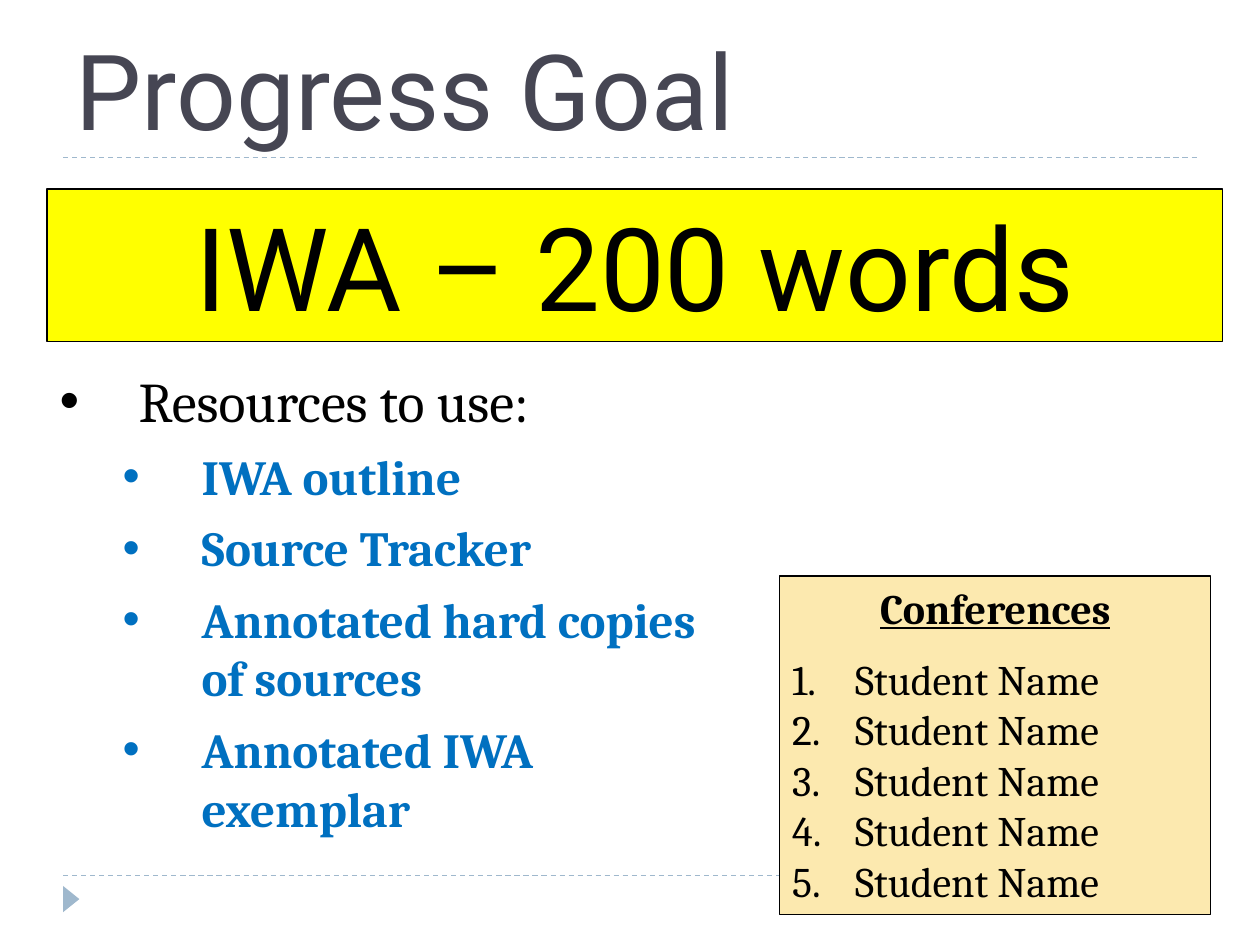
from dataclasses import dataclass

from lxml import etree
from pptx import Presentation
from pptx.dml.color import RGBColor
from pptx.enum.dml import MSO_LINE
from pptx.enum.shapes import MSO_CONNECTOR, MSO_SHAPE
from pptx.enum.text import MSO_ANCHOR, MSO_AUTO_SIZE, PP_ALIGN
from pptx.oxml.ns import qn
from pptx.util import Cm, Pt

DASH = MSO_LINE.DASH
STRAIGHT = MSO_CONNECTOR.STRAIGHT
RECTANGLE, TRIANGLE = MSO_SHAPE.RECTANGLE, MSO_SHAPE.ISOSCELES_TRIANGLE
TOP, MIDDLE, BOTTOM = MSO_ANCHOR.TOP, MSO_ANCHOR.MIDDLE, MSO_ANCHOR.BOTTOM
NO_FIT = MSO_AUTO_SIZE.NONE
LEFT, CENTER = PP_ALIGN.LEFT, PP_ALIGN.CENTER

TITLE = "Progress Goal"
GOAL = "IWA – 200 words"
RESOURCES_HEADING = "Resources to use:"
RESOURCES = [
    "IWA outline",
    "Source Tracker",
    "Annotated hard copies of sources",
    "Annotated IWA exemplar",
]
CONFERENCES_HEADING = "Conferences"
STUDENTS = ["Student Name"] * 5

TITLE_BOX = (1.27, 0.64, 22.86, 2.54)
GOAL_BOX = (0.95, 3.81, 23.7, 3.07)
RESOURCES_BOX = (0.95, 7.26, 13.67, 9.88)
CONFERENCES_BOX = (15.72, 11.61, 8.69, 6.83)
MARKER_BOX = (1.17, 17.96, 0.53, 0.33)
RULE_SPAN = (1.27, 24.13)
RULE_HEIGHTS = (3.18, 17.65)
BULLET_HANG = 1.59
LEVEL_STEP = 1.27
NUMBER_HANG = 1.27


@dataclass(frozen=True)
class Theme:
    display_font: str = "Roboto"
    text_font: str = "Cambria"
    title: str = "464653"
    ink: str = "000000"
    link: str = "0070C0"
    accent: str = "9FB8CD"
    goal: str = "FFFF00"
    panel: str = "FCE9AF"
    title_size: int = 60
    goal_size: int = 66
    heading_size: int = 32
    item_size: int = 28
    panel_size: int = 24
    line_width: float = 0.75
    item_gap: float = 7.2
    panel_gap: float = 12


THEME = Theme()


def rgb(value):
    return RGBColor.from_string(value)


def place(shape, box):
    shape.left, shape.top, shape.width, shape.height = map(Cm, box)


def prepare_frame(shape, anchor):
    frame = shape.text_frame
    frame.word_wrap = True
    frame.auto_size = NO_FIT
    frame.vertical_anchor = anchor
    return frame


def write(paragraph, text, font, size, color, align=LEFT, before=0, bold=False, underline=False):
    paragraph.alignment = align
    paragraph.space_before = Pt(before)
    run = paragraph.add_run()
    run.text = text
    run.font.name = font
    run.font.size = Pt(size)
    run.font.color.rgb = rgb(color)
    run.font.bold = bold
    run.font.underline = underline


def add_marker(paragraph, left, hang, tag, **attributes):
    properties = paragraph._p.get_or_add_pPr()
    properties.set("marL", str(Cm(left)))
    properties.set("indent", str(-Cm(hang)))
    etree.SubElement(properties, qn("a:buFont"), typeface="Arial" if tag == "a:buChar" else THEME.text_font)
    etree.SubElement(properties, qn(tag), **attributes)


def add_block(slide, kind, box, fill, outlined=True):
    shape = slide.shapes.add_shape(kind, *map(Cm, box))
    shape.shadow.inherit = False
    shape.fill.solid()
    shape.fill.fore_color.rgb = rgb(fill)
    if outlined:
        shape.line.color.rgb = rgb(THEME.ink)
        shape.line.width = Pt(THEME.line_width)
    else:
        shape.line.fill.background()
    return shape


def add_rule(slide, height):
    start, end = RULE_SPAN
    rule = slide.shapes.add_connector(STRAIGHT, Cm(start), Cm(height), Cm(end), Cm(height))
    rule.line.color.rgb = rgb(THEME.accent)
    rule.line.width = Pt(THEME.line_width)
    rule.line.dash_style = DASH
    etree.SubElement(rule._element.spPr, qn("a:effectLst"))


def fill_title(shape):
    place(shape, TITLE_BOX)
    frame = prepare_frame(shape, BOTTOM)
    write(frame.paragraphs[0], TITLE, THEME.display_font, THEME.title_size, THEME.title)


def fill_resources(shape):
    place(shape, RESOURCES_BOX)
    frame = prepare_frame(shape, TOP)
    heading = frame.paragraphs[0]
    write(heading, RESOURCES_HEADING, THEME.text_font, THEME.heading_size, THEME.ink)
    add_marker(heading, BULLET_HANG, BULLET_HANG, "a:buChar", char="•")
    for resource in RESOURCES:
        paragraph = frame.add_paragraph()
        paragraph.level = 1
        write(paragraph, resource, THEME.text_font, THEME.item_size, THEME.link,
              before=THEME.item_gap, bold=True)
        add_marker(paragraph, BULLET_HANG + LEVEL_STEP, BULLET_HANG, "a:buChar", char="•")


def add_goal(slide):
    shape = add_block(slide, RECTANGLE, GOAL_BOX, THEME.goal)
    frame = prepare_frame(shape, MIDDLE)
    write(frame.paragraphs[0], GOAL, THEME.display_font, THEME.goal_size, THEME.ink, CENTER)


def add_conferences(slide):
    shape = add_block(slide, RECTANGLE, CONFERENCES_BOX, THEME.panel)
    frame = prepare_frame(shape, TOP)
    write(frame.paragraphs[0], CONFERENCES_HEADING, THEME.text_font, THEME.panel_size,
          THEME.ink, CENTER, bold=True, underline=True)
    for index, student in enumerate(STUDENTS):
        paragraph = frame.add_paragraph()
        write(paragraph, student, THEME.text_font, THEME.panel_size, THEME.ink,
              before=0 if index else THEME.panel_gap)
        add_marker(paragraph, NUMBER_HANG, NUMBER_HANG, "a:buAutoNum", type="arabicPeriod")


def main():
    presentation = Presentation()
    presentation.slide_width, presentation.slide_height = Cm(25.4), Cm(19.05)
    slide = presentation.slides.add_slide(presentation.slide_layouts[1])
    for height in RULE_HEIGHTS:
        add_rule(slide, height)
    marker = add_block(slide, TRIANGLE, MARKER_BOX, THEME.accent, outlined=False)
    marker.rotation = 90
    fill_title(slide.shapes.title)
    add_goal(slide)
    fill_resources(slide.placeholders[1])
    add_conferences(slide)
    presentation.save("out.pptx")


if __name__ == "__main__":
    main()
